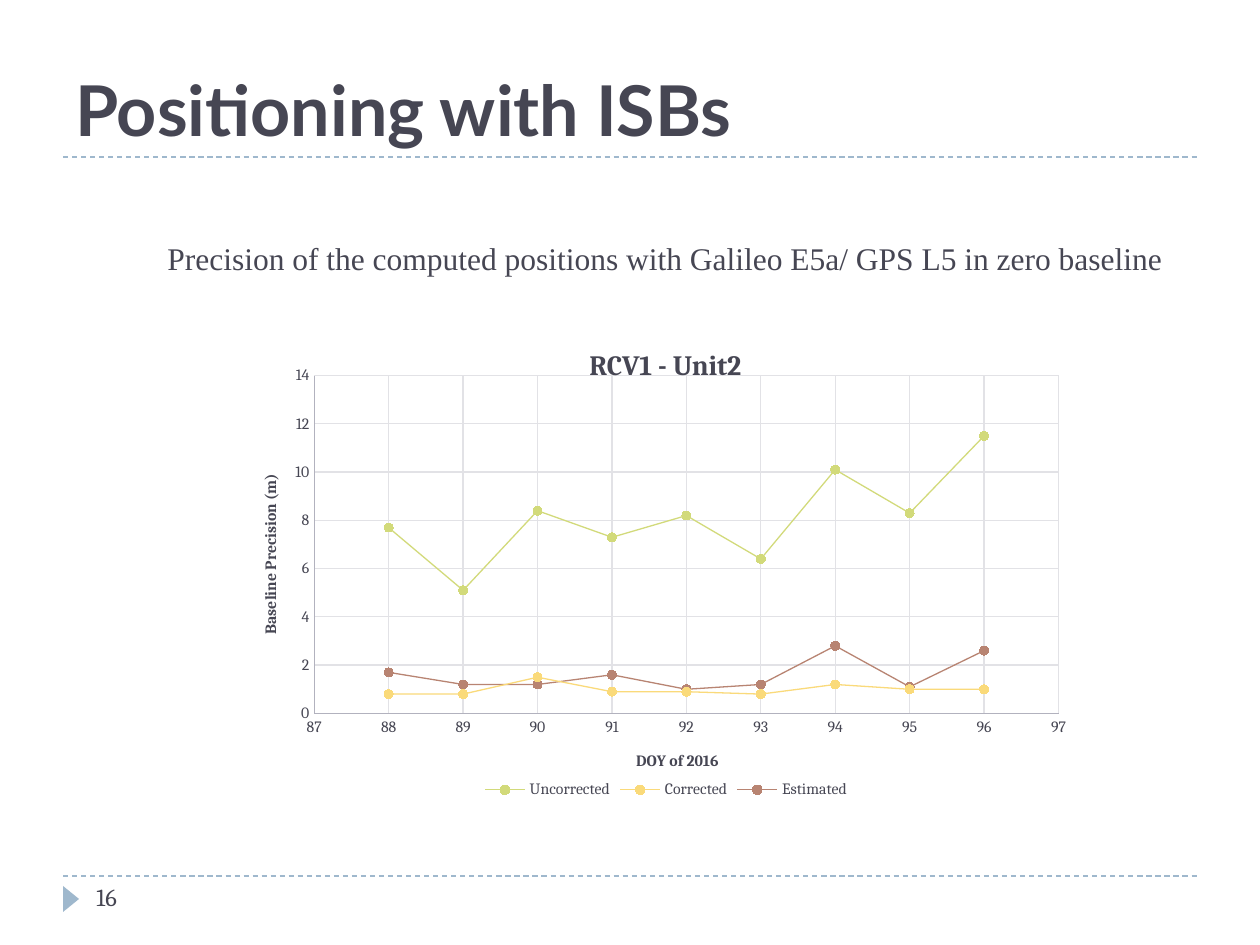
from dataclasses import dataclass

from lxml import etree
from pptx import Presentation
from pptx.chart.data import XyChartData
from pptx.dml.color import RGBColor
from pptx.enum.chart import (XL_CHART_TYPE, XL_LEGEND_POSITION, XL_MARKER_STYLE,
                             XL_TICK_MARK)
from pptx.enum.dml import MSO_LINE
from pptx.enum.shapes import MSO_CONNECTOR, MSO_SHAPE
from pptx.enum.text import MSO_ANCHOR
from pptx.oxml import parse_xml
from pptx.oxml.ns import qn
from pptx.util import Emu, Pt

SCATTER = XL_CHART_TYPE.XY_SCATTER_LINES
BOTTOM = XL_LEGEND_POSITION.BOTTOM
CIRCLE = XL_MARKER_STYLE.CIRCLE
NO_TICK = XL_TICK_MARK.NONE
DASH = MSO_LINE.DASH
STRAIGHT = MSO_CONNECTOR.STRAIGHT
TRIANGLE = MSO_SHAPE.ISOSCELES_TRIANGLE
TOP, LOW = MSO_ANCHOR.TOP, MSO_ANCHOR.BOTTOM

INK = RGBColor(0x46, 0x46, 0x53)
BLUE = RGBColor(0x9F, 0xB8, 0xCD)
AXIS = RGBColor(0xB2, 0xB2, 0xBE)
GRID = RGBColor(0xE2, 0xE2, 0xE6)
LIME = RGBColor(0xD2, 0xDA, 0x7A)
LIME_DOT = RGBColor(0xD6, 0xDF, 0x75)
GOLD = RGBColor(0xFA, 0xDA, 0x7A)
GOLD_DOT = RGBColor(0xFF, 0xDC, 0x75)
CLAY = RGBColor(0xB8, 0x84, 0x72)
CLAY_DOT = RGBColor(0xBC, 0x82, 0x6E)

SCALE = 914400 / 126
SERIF = "Cambria"
C_NS = "http://schemas.openxmlformats.org/drawingml/2006/chart"


@dataclass
class Label:
    text: str
    box: tuple[int, int, int, int]
    font: str
    size: int
    bold: bool = False
    anchor: MSO_ANCHOR = TOP


@dataclass
class Curve:
    name: str
    vals: list[float]
    line: RGBColor
    dot: RGBColor


@dataclass
class Scale:
    title: str
    low: int
    high: int
    step: int
    left: float
    top: float


LABELS = [
    Label("16", (84, 876, 273, 50), SERIF, 14),
    Label("Positioning with ISBs", (63, 21, 1134, 136), "Lato", 40, True, LOW),
    Label("Precision of the computed positions with Galileo E5a/ GPS L5 in zero baseline",
          (155, 233, 1042, 50), "Times New Roman", 18),
]
DAYS = range(88, 97)
CURVES = [
    Curve("Uncorrected", [7.7, 5.1, 8.4, 7.3, 8.2, 6.4, 10.1, 8.3, 11.5], LIME, LIME_DOT),
    Curve("Corrected", [0.8, 0.8, 1.5, 0.9, 0.9, 0.8, 1.2, 1, 1], GOLD, GOLD_DOT),
    Curve("Estimated", [1.7, 1.2, 1.2, 1.6, 1, 1.2, 2.8, 1.1, 2.6], CLAY, CLAY_DOT),
]
X_SCALE = Scale("DOY of 2016", 87, 97, 1, 0.46, 0.88)
Y_SCALE = Scale("Baseline Precision (m)", 0, 14, 2, 0, 0.3)


def px(num: int) -> Emu:
    return Emu(round(num * SCALE))


def style(font, size: int, bold: bool = False, name: str = SERIF) -> None:
    font.name, font.size, font.bold = name, Pt(size), bold
    font.color.rgb = INK


def stroke(line, color: RGBColor) -> None:
    line.color.rgb = color
    line.width = Pt(0.75)


def add_rule(slide, y: int) -> None:
    rule = slide.shapes.add_connector(STRAIGHT, px(63), px(y), px(1197), px(y))
    stroke(rule.line, BLUE)
    rule.line.dash_style = DASH
    etree.SubElement(rule._element.spPr, qn("a:effectLst"))


def add_label(slide, label: Label) -> None:
    frame = slide.shapes.add_textbox(*map(px, label.box)).text_frame
    frame.word_wrap = True
    frame.vertical_anchor = label.anchor
    frame.text = label.text
    style(frame.paragraphs[0].runs[0].font, label.size, label.bold, label.font)


def layout(x: float, y: float, size: tuple[float, ...] = ()):
    parts = [("layoutTarget", "inner")] if size else []
    parts += [("xMode", "edge"), ("yMode", "edge"), ("x", x), ("y", y)]
    parts += list(zip(("w", "h"), size))
    body = "".join(f'<c:{tag} val="{val}"/>' for tag, val in parts)
    return parse_xml(f'<c:layout xmlns:c="{C_NS}"><c:manualLayout>{body}'
                     "</c:manualLayout></c:layout>")


def set_title(title, text: str, size: int, x: float, y: float) -> None:
    title.text_frame.text = text
    style(title.text_frame.paragraphs[0].runs[0].font, size, True)
    node = title._element
    for old in node.findall(qn("c:layout")):
        node.remove(old)
    node.find(qn("c:tx")).addnext(layout(x, y))


def set_axis(axis, scale: Scale) -> None:
    axis.minimum_scale, axis.maximum_scale = scale.low, scale.high
    axis.major_unit = scale.step
    axis.major_tick_mark = axis.minor_tick_mark = NO_TICK
    axis.has_major_gridlines = True
    stroke(axis.major_gridlines.format.line, GRID)
    stroke(axis.format.line, AXIS)
    style(axis.tick_labels.font, 9)
    axis.tick_labels.number_format = "General"
    axis.tick_labels.number_format_is_linked = False
    set_title(axis.axis_title, scale.title, 9, scale.left, scale.top)


def add_plot(slide) -> None:
    data = XyChartData()
    for curve in CURVES:
        row = data.add_series(curve.name)
        for day, val in zip(DAYS, curve.vals):
            row.add_data_point(day, val)
    box = map(px, (257, 328, 818, 476))
    chart = slide.shapes.add_chart(SCATTER, *box, data).chart
    style(chart.font, 10)
    set_title(chart.chart_title, "RCV1 - Unit2", 16, 0.4, 0.03)
    set_axis(chart.category_axis, X_SCALE)
    set_axis(chart.value_axis, Y_SCALE)
    chart.has_legend = True
    chart.legend.position = BOTTOM
    chart.legend.include_in_layout = False
    style(chart.legend.font, 9)

    # Fixed inner plot area
    area = chart._chartSpace.chart.plotArea
    for old in area.findall(qn("c:layout")):
        area.remove(old)
    area.insert(0, layout(0.07, 0.1, (0.91, 0.71)))

    # Lines and markers
    plot = chart.plots[0]
    plot.vary_by_categories = False
    for series, curve in zip(plot.series, CURVES):
        series.smooth = False
        stroke(series.format.line, curve.line)
        mark = series.marker
        mark.style, mark.size = CIRCLE, 5
        mark.format.fill.solid()
        mark.format.fill.fore_color.rgb = curve.dot
        stroke(mark.format.line, curve.line)


def main() -> None:
    deck = Presentation()
    deck.slide_width, deck.slide_height = px(1260), px(945)
    slide = deck.slides.add_slide(deck.slide_layouts[6])

    # Rules and page marker
    for y in (876, 157):
        add_rule(slide, y)
    mark = slide.shapes.add_shape(TRIANGLE, *map(px, (58, 891, 26, 16)))
    mark.rotation = 90
    mark.shadow.inherit = False
    mark.fill.solid()
    mark.fill.fore_color.rgb = BLUE
    mark.line.fill.background()

    # Text and chart
    for label in LABELS:
        add_label(slide, label)
    add_plot(slide)
    deck.save("out.pptx")


if __name__ == "__main__":
    main()
